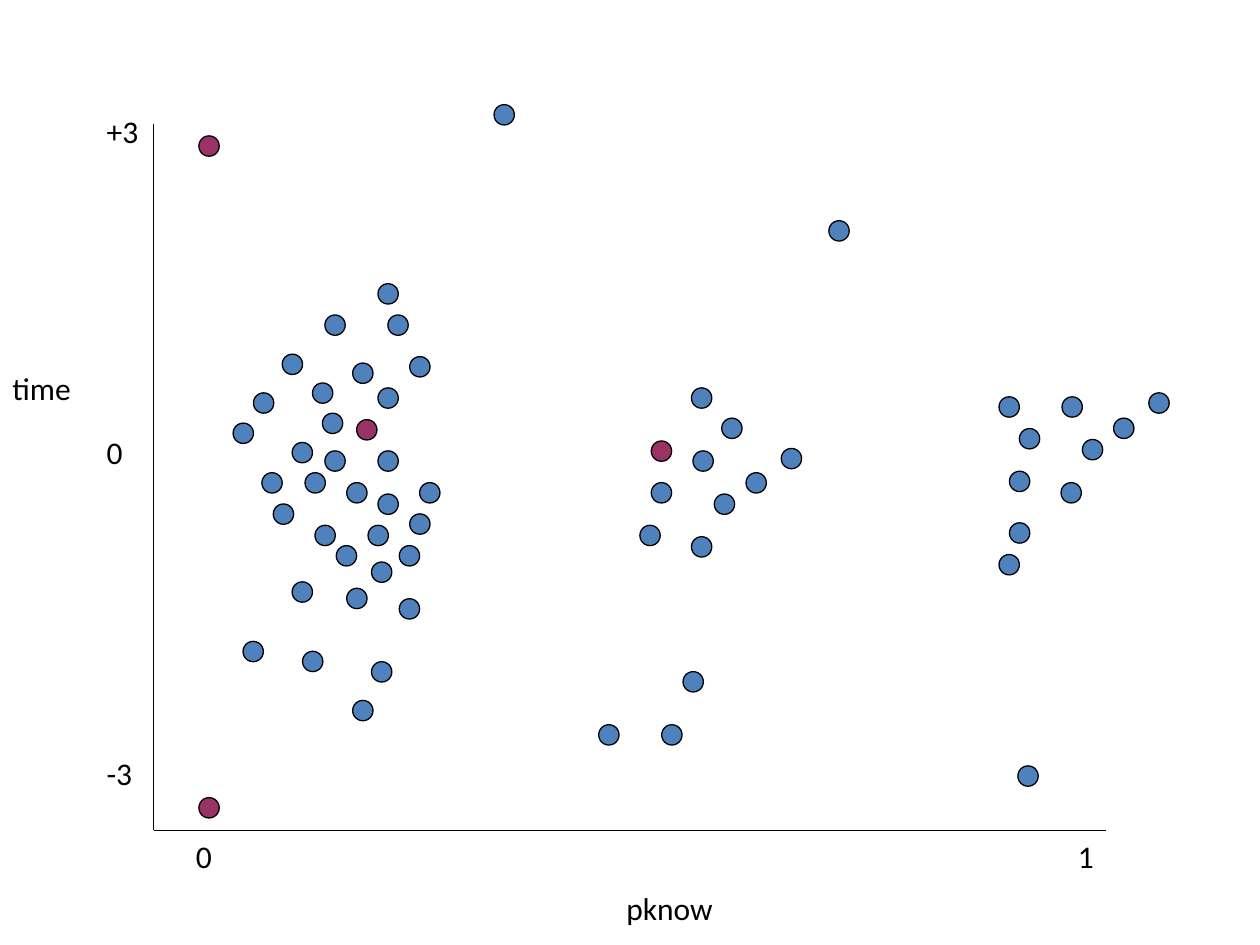
from lxml import etree
from pptx import Presentation
from pptx import util as u
from pptx.dml.color import RGBColor
from pptx.enum import shapes, text
from pptx.oxml import ns

Cm, Pt = u.Cm, u.Pt
COLORS = {"blue": "4F81BD", "plum": "993366", "black": "000000"}
DOT_SIZE = 0.41
AXIS_LEFT, AXIS_TOP, AXIS_RIGHT, AXIS_BOTTOM = 3.1, 2.51, 22.3, 16.74

# Left and top of each dot in centimetres, by cluster
low_pknow = [
    (8.05, 11), (6.78, 11), (6.99, 11.86), (8.26, 10.36), (8.05, 12.07),
    (7.42, 10.59), (5.51, 10.16), (6.15, 9.53), (5.28, 9.53), (7.82, 6.35),
    (6.55, 6.35), (8.26, 7.19), (6.99, 9.73), (7.62, 5.72), (7.62, 9.09),
    (8.46, 9.73), (6.55, 9.09), (7.11, 14.12), (7.49, 13.34), (4.9, 12.93),
    (5.89, 11.73), (7.49, 11.33), (6.1, 13.13), (6.3, 7.72), (5.69, 7.14),
    (4.7, 8.53), (5.11, 7.92), (5.89, 8.92), (7.11, 7.32), (7.62, 9.96),
    (6.5, 8.33), (7.62, 7.82), (6.35, 10.59),
]
middle_pknow = [
    (13.13, 9.73), (12.9, 10.59), (14.4, 9.96), (15.04, 9.53), (13.97, 9.09),
    (13.94, 10.82), (15.75, 9.04), (13.94, 7.82), (14.55, 8.43),
    (12.07, 14.61), (13.34, 14.61), (13.77, 13.54),
]
high_pknow = [
    (20.14, 11.18), (20.14, 8), (20.55, 8.64), (20.35, 9.5), (21.82, 8.86),
    (20.35, 10.54), (22.45, 8.43), (21.41, 8), (21.39, 9.73), (23.16, 7.92),
    (20.52, 15.44),
]
outliers = [(9.96, 2.11), (16.71, 4.45)]
centers = [(4.01, 2.74), (4.01, 16.08), (13.13, 8.89), (7.19, 8.46)]


def color(name):
    return RGBColor.from_string(COLORS[name])


def add_label(left, top, width, height, lines, gap=0):
    """Add a text box with one paragraph per line, gap points apart."""
    frame = slide.shapes.add_textbox(Cm(left), Cm(top), Cm(width), Cm(height)).text_frame
    frame.word_wrap = True
    frame.text = "\n".join(lines)
    for index, paragraph in enumerate(frame.paragraphs):
        paragraph.font.name = "Calibri"
        paragraph.font.size = Pt(18)
        paragraph.font.color.rgb = color("black")
        paragraph.space_before = Pt(gap if index else 0)
    return frame


presentation = Presentation()
presentation.slide_width, presentation.slide_height = Cm(25.4), Cm(19.05)
slide = presentation.slides.add_slide(presentation.slide_layouts[6])

# Axis labels
add_label(0, 7.32, 2.1, 1.02, ["time"])
add_label(1.9, 2.13, 1.6, 14.78, ["+3", "0", "-3"], gap=161.8)
pknow_label = add_label(3.7, AXIS_BOTTOM, 19.6, 2.16, ["0\t1", "pknow"], gap=8.5)
scale, name = pknow_label.paragraphs
name.alignment = text.PP_ALIGN.CENTER
tab_list = etree.SubElement(scale._p.get_or_add_pPr(), ns.qn("a:tabLst"))
etree.SubElement(tab_list, ns.qn("a:tab"), pos=str(Cm(17.78)), algn="l")

# Axes
for end_x, end_y in [(AXIS_LEFT, AXIS_TOP), (AXIS_RIGHT, AXIS_BOTTOM)]:
    axis = slide.shapes.add_connector(
        shapes.MSO_CONNECTOR.STRAIGHT,
        Cm(AXIS_LEFT), Cm(AXIS_BOTTOM), Cm(end_x), Cm(end_y))
    axis.line.color.rgb = color("black")
    axis.line.width = Pt(0.75)
    etree.SubElement(axis._element.spPr, ns.qn("a:effectLst"))

# Dots
for fill, dots in [("blue", low_pknow + middle_pknow + high_pknow + outliers),
                   ("plum", centers)]:
    for left, top in dots:
        dot = slide.shapes.add_shape(
            shapes.MSO_SHAPE.OVAL, Cm(left), Cm(top), Cm(DOT_SIZE), Cm(DOT_SIZE))
        dot.shadow.inherit = False
        dot.fill.solid()
        dot.fill.fore_color.rgb = color(fill)
        dot.line.color.rgb = color("black")
        dot.line.width = Pt(0.75)

presentation.save("out.pptx")
